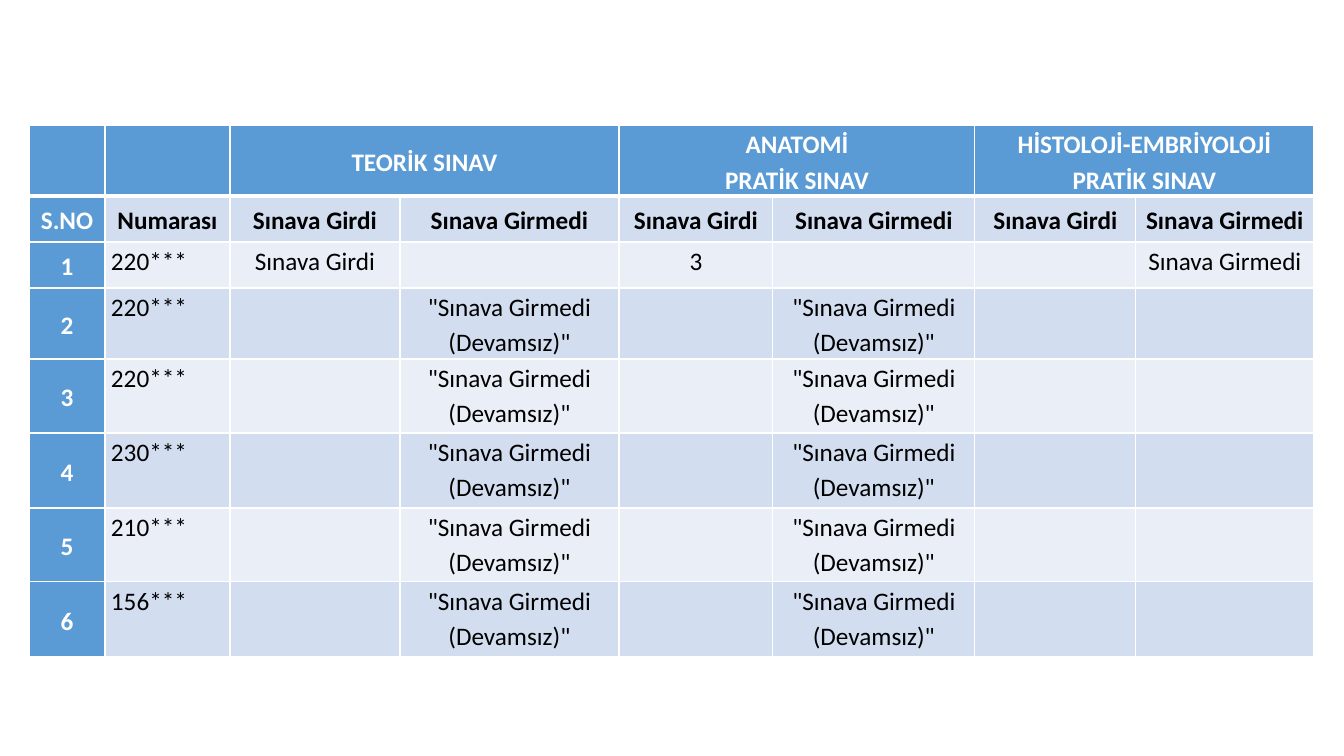
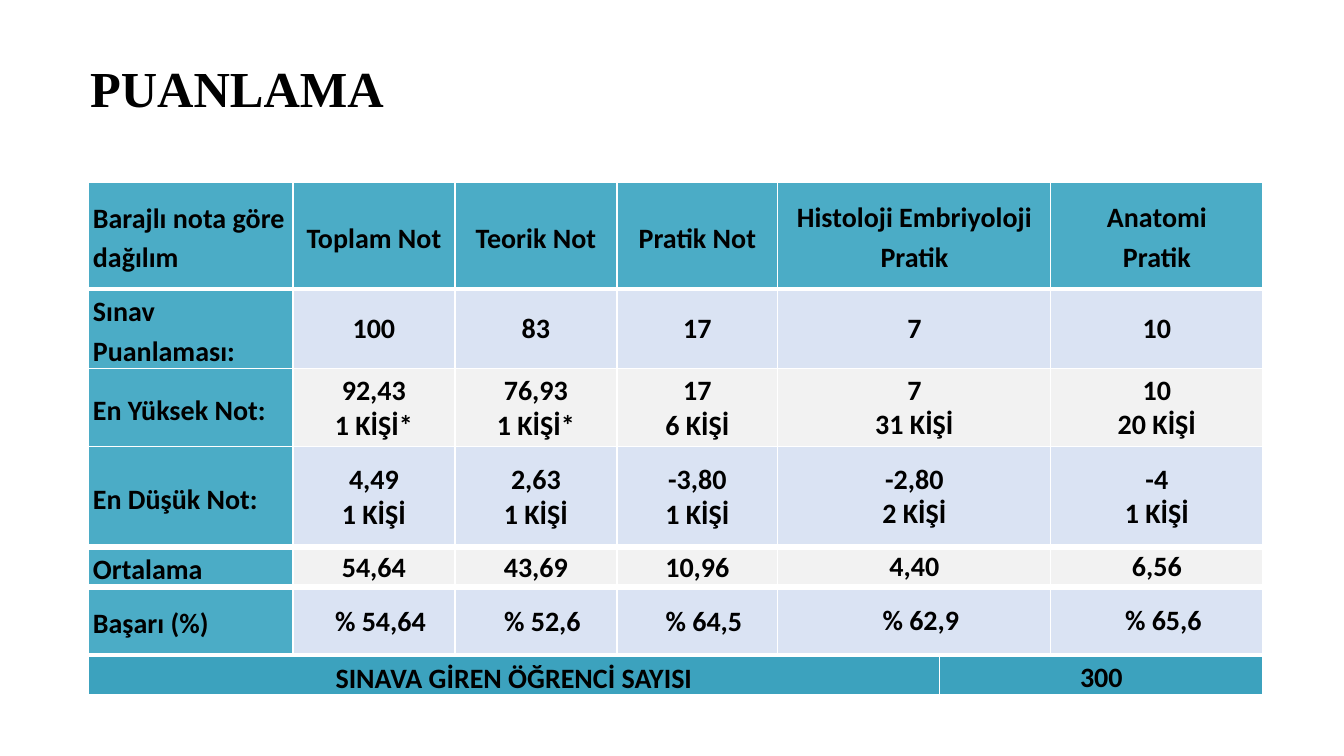
import lxml.etree
import pptx
import pptx.dml.color
import pptx.enum.text
import pptx.oxml.ns
import pptx.util

SLIDE_WIDTH, SLIDE_HEIGHT = 1344, 756
EMU_PER_PX = 12192000 / SLIDE_WIDTH
TITLE_ONLY, BLANK = 5, 6

COLORS = {
    "black": "000000", "white": "FFFFFF",
    "blue": "5B9BD5", "blue_band": "D2DEEF", "pale_band": "EAEFF7",
    "teal": "4BACC6", "teal_total": "3CA2BE",
    "score_band": "DAE3F3", "gray_band": "F2F2F2",
}
ALIGN = pptx.enum.text.PP_ALIGN
ANCHOR = pptx.enum.text.MSO_ANCHOR

ATTENDED, MISSED = "Sınava Girdi", "Sınava Girmedi"
ABSENT = '"Sınava Girmedi\n(Devamsız)"'
ABSENT_NUMBERS = ["220***", "220***", "230***", "210***", "156***"]

ATTENDANCE = {
    "left": 29, "top": 125,
    "widths": [76, 125, 170, 219, 154, 202, 161, 178],
    "heights": [71, 46, 46, 71, 74, 75, 74, 75],
    "rules": [1, 3, 1, 1, 1, 1, 1, 1, 1],
    "spans": [(0, 2, 3), (0, 4, 5), (0, 6, 7)],
    "rows": [
        ("", "", "TEORİK SINAV", "", "ANATOMİ\nPRATİK SINAV", "",
         "HİSTOLOJİ-EMBRİYOLOJİ\nPRATİK SINAV", ""),
        ("S.NO", "Numarası") + (ATTENDED, MISSED) * 3,
        ("1", "220***", ATTENDED, "", "3", "", "", MISSED),
    ] + [
        (str(order), number, "", ABSENT, "", ABSENT, "", "")
        for order, number in enumerate(ABSENT_NUMBERS, start=2)
    ],
}

SCORES = {
    "left": 88, "top": 182,
    "widths": [205, 162, 162, 161, 162, 111, 212],
    "heights": [107, 79, 78, 100, 40, 68, 38],
    "rules": [1, 3, 1, 1, 4.5, 4.5, 3, 3],
    "spans": [(row, 4, 5) for row in range(6)] + [(6, 0, 4), (6, 5, 6)],
    "rows": [
        ("Barajlı nota göre dağılım", "Toplam Not", "Teorik Not", "Pratik Not",
         "Histoloji Embriyoloji Pratik", "", "Anatomi\nPratik"),
        ("Sınav Puanlaması:", "100", "83", "17", "7", "", "10"),
        ("En Yüksek Not:", "92,43\n1 KİŞİ*", "76,93\n1 KİŞİ*", "17\n6 KİŞİ",
         "7\n31 KİŞİ", "", "10\n20 KİŞİ"),
        ("En Düşük Not:", "4,49\n1 KİŞİ", "2,63\n1 KİŞİ", "-3,80\n1 KİŞİ",
         "-2,80\n2 KİŞİ", "", "-4\n1 KİŞİ"),
        ("Ortalama", "54,64", "43,69", "10,96", "4,40", "", "6,56"),
        ("Başarı (%)", "% 54,64", "% 52,6", "% 64,5", "% 62,9", "", "% 65,6"),
        ("SINAVA GİREN ÖĞRENCİ SAYISI", "", "", "", "", "300", ""),
    ],
}
SUCCESS_ROW, TOTAL_ROW = 5, 6


def px(length):
    return pptx.util.Emu(round(length * EMU_PER_PX))


def rgb(color):
    return pptx.dml.color.RGBColor.from_string(COLORS[color])


def format_text(frame, color, align, spacing, **font_format):
    for paragraph in frame.paragraphs:
        paragraph.alignment = align
        paragraph.line_spacing = spacing
        paragraph.font.color.rgb = rgb(color)
        for run in paragraph.runs:
            run.font.color.rgb = rgb(color)
            for name, value in font_format.items():
                setattr(run.font, name, value)


def set_borders(cell, widths):
    properties = cell._tc.get_or_add_tcPr()
    for side, width in widths.items():
        line = lxml.etree.SubElement(
            properties, pptx.oxml.ns.qn(f"a:ln{side}"), w=str(pptx.util.Pt(width)))
        fill = lxml.etree.SubElement(line, pptx.oxml.ns.qn("a:solidFill"))
        lxml.etree.SubElement(
            fill, pptx.oxml.ns.qn("a:srgbClr"), val=COLORS["white"])


def attendance_style(row, column):
    header = row == 0 or column == 0
    band = "blue_band" if row % 2 else "pale_band"
    return {
        "fill": "blue" if header else band,
        "insets": (6, 0, 6, 0),
        "anchor": ANCHOR.MIDDLE if header or row == 1 else ANCHOR.TOP,
        "text": {
            "color": "white" if header else "black",
            "align": ALIGN.LEFT if column == 1 and row > 1 else ALIGN.CENTER,
            "spacing": 1.15,
            "bold": header or row == 1,
            "size": pptx.util.Pt(18),
        },
    }


def score_style(row, column):
    header = row in (0, TOTAL_ROW) or column == 0
    if row == TOTAL_ROW:
        fill = "teal_total"
    elif header:
        fill = "teal"
    else:
        fill = "score_band" if row % 2 else "gray_band"
    side = 5 if column < 4 else 0
    shift = 13 if row == SUCCESS_ROW and column else 0
    return {
        "fill": fill,
        "insets": (side + shift, side // 5, side, 0),
        "anchor": ANCHOR.MIDDLE,
        "text": {
            "color": "black",
            "align": ALIGN.LEFT if column == 0 and row < TOTAL_ROW else ALIGN.CENTER,
            "spacing": 1.15 if header else 1.0,
            "bold": True,
            "size": pptx.util.Pt(20),
        },
    }


def add_grid(slide, content, style_of):
    """Add a table with the content, its merged cells and the given cell style."""
    rows, widths, heights = (content[key] for key in ("rows", "widths", "heights"))
    table = slide.shapes.add_table(
        len(rows), len(widths), px(content["left"]), px(content["top"]),
        px(sum(widths)), px(sum(heights))).table
    for column, width in zip(table.columns, widths):
        column.width = px(width)
    for row, height in zip(table.rows, heights):
        row.height = px(height)
    for row, first, last in content["spans"]:
        table.cell(row, first).merge(table.cell(row, last))

    for row, texts in enumerate(rows):
        above, below = content["rules"][row:row + 2]
        for column, text in enumerate(texts):
            cell, style = table.cell(row, column), style_of(row, column)
            cell.text = text
            cell.vertical_anchor = style["anchor"]
            for side, inset in zip(("left", "top", "right", "bottom"), style["insets"]):
                setattr(cell, f"margin_{side}", px(inset))
            set_borders(cell, {"L": 1, "R": 1, "T": above, "B": below})
            cell.fill.solid()
            cell.fill.fore_color.rgb = rgb(style["fill"])
            format_text(cell.text_frame, name="Calibri", **style["text"])


def set_title(slide, text):
    title = slide.shapes.title
    place = {"left": 80, "top": 65, "width": 1159, "height": 53}
    for name, value in place.items():
        setattr(title, name, px(value))
    frame = title.text_frame
    frame.text = text
    frame.auto_size = pptx.enum.text.MSO_AUTO_SIZE.NONE
    frame.vertical_anchor = ANCHOR.MIDDLE
    format_text(frame, "black", ALIGN.LEFT, 0.9, name="Times New Roman",
                size=pptx.util.Pt(36), bold=True)


def main():
    deck = pptx.Presentation()
    deck.slide_width, deck.slide_height = px(SLIDE_WIDTH), px(SLIDE_HEIGHT)

    attendance = deck.slides.add_slide(deck.slide_layouts[BLANK])
    add_grid(attendance, ATTENDANCE, attendance_style)

    scoring = deck.slides.add_slide(deck.slide_layouts[TITLE_ONLY])
    set_title(scoring, "PUANLAMA")
    add_grid(scoring, SCORES, score_style)

    deck.save("out.pptx")


if __name__ == "__main__":
    main()
